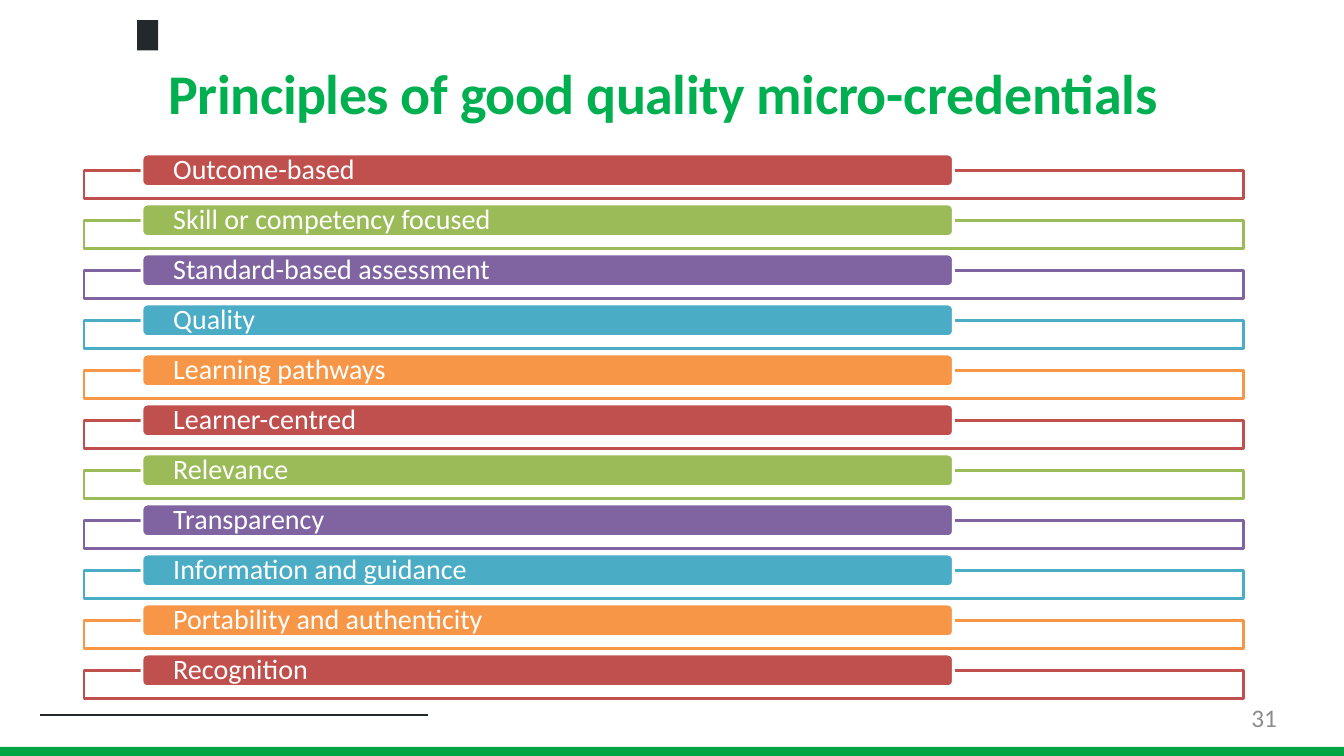
from pptx import Presentation
from pptx import util as u
from pptx.dml.color import RGBColor
from pptx.enum import shapes, text
from pptx.oxml.ns import qn
from lxml import etree

Pt = u.Pt
HUES = {"red": "C0504D", "lime": "9BBB59", "plum": "8064A2", "teal": "4BACC6", "gold": "F79646"}
INK = {"dark": "23282A", "green": "00A643", "title": "00B050", "white": "FFFFFF", "grey": "8C8C8C"}
ITEMS = ["Outcome-based", "Skill or competency focused", "Standard-based assessment",
         "Quality", "Learning pathways", "Learner-centred", "Relevance", "Transparency",
         "Information and guidance", "Portability and authenticity", "Recognition"]
KIND = shapes.MSO_SHAPE


def put(slide, kind, box, fill, line=None, width=0):
    """Add a flat preset shape with a fill and an optional outline."""
    shape = slide.shapes.add_shape(kind, *map(Pt, box))
    shape.shadow.inherit = False
    shape.fill.solid()
    shape.fill.fore_color.rgb = RGBColor.from_string(fill)
    if line:
        shape.line.color.rgb = RGBColor.from_string(line)
        shape.line.width = Pt(width)
    else:
        shape.line.fill.background()
    return shape


def frame(shape, left=0, right=0, anchor=text.MSO_ANCHOR.TOP):
    """Set the insets of a shape's text and return its first paragraph."""
    body = shape.text_frame
    body.word_wrap = True
    body.margin_left, body.margin_right = Pt(left), Pt(right)
    body.margin_top = body.margin_bottom = 0
    body.vertical_anchor = anchor
    para = body.paragraphs[0]
    para.alignment = text.PP_ALIGN.LEFT
    return para


def add_run(para, words, size, color, bold=False, track=0):
    """Add one styled run to a paragraph."""
    run = para.add_run()
    run.text = words
    run.font.name = "Calibri"
    run.font.size = Pt(size)
    run.font.bold = bold
    run.font.color.rgb = RGBColor.from_string(color)
    if track:
        run.font._element.set("spc", str(track))


def add_trim(slide, wide, high):
    """Draw the corner mark, the footer rule and the bottom band."""
    rule = slide.shapes.add_connector(shapes.MSO_CONNECTOR.STRAIGHT,
                                      Pt(28.8), Pt(high - 29), Pt(306), Pt(high - 29))
    rule.line.color.rgb = RGBColor.from_string(INK["dark"])
    rule.line.width = Pt(1.5)
    etree.SubElement(rule._element.spPr, qn("a:effectLst"))
    put(slide, KIND.RECTANGLE, (97.9, 14.4, 15, 21.6), INK["dark"])
    put(slide, KIND.RECTANGLE, (0, high - 6.5, wide, 6.5), INK["green"])


def add_title(slide, box):
    """Write the slide title in its box."""
    para = frame(put(slide, KIND.RECTANGLE, box, INK["white"], INK["white"], 0.5), left=6.5)
    para.line_spacing = Pt(51.6)
    add_run(para, "Principles of good quality micro-", 40, INK["title"], True, -30)
    add_run(para, "credentials", 40, INK["title"], True, -10)


def add_list(slide, box):
    """Stack one outlined strip and one label bar per principle."""
    left, top, wide, high = box
    strip, bar, drop = 20.16, 23.25, 11.6
    step = (high - drop - strip) / (len(ITEMS) - 1)
    hues = list(HUES.values())
    for row, item in enumerate(ITEMS):
        hue, y = hues[row % len(hues)], top + row * step
        base = put(slide, KIND.RECTANGLE, (left, y + drop, wide, strip), INK["white"], hue, 2)
        tint = base._element.spPr.find(qn("a:solidFill"))[0]
        etree.SubElement(tint, qn("a:alpha")).set("val", "90000")
        label = put(slide, KIND.ROUNDED_RECTANGLE, (left + 41.4, y, wide * 0.7, bar),
                    hue, INK["white"], 2)
        para = frame(label, 21.2, 21.2, text.MSO_ANCHOR.MIDDLE)
        para.line_spacing = 0.9
        add_run(para, item, 20, INK["white"])


def add_page(slide, box):
    """Write the page number at the right of its box."""
    para = frame(slide.shapes.add_textbox(*map(Pt, box)))
    para.alignment = text.PP_ALIGN.RIGHT
    add_run(para, "31", 18, INK["grey"])


def main():
    """Build the slide and save it."""
    deck = Presentation()
    deck.slide_width, deck.slide_height = Pt(960), Pt(540)
    slide = deck.slides.add_slide(deck.slide_layouts[6])
    add_trim(slide, 960, 540)
    add_title(slide, (113.8, 38.2, 732.2, 52.6))
    add_list(slide, (60, 110, 828, 389))
    add_page(slide, (691.2, 501.8, 221, 27.4))
    deck.save("out.pptx")


if __name__ == "__main__":
    main()
